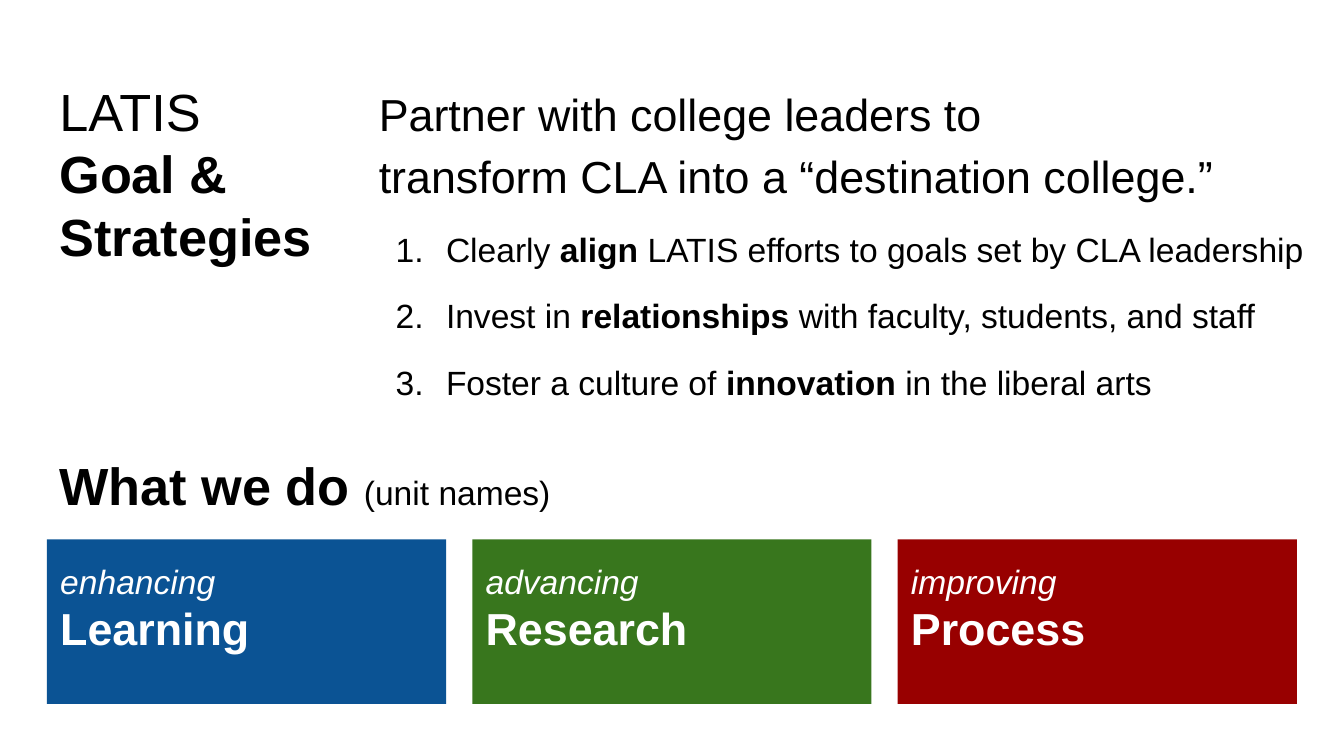
from lxml.etree import SubElement
from pptx import Presentation
from pptx.dml.color import RGBColor
from pptx.enum.shapes import MSO_SHAPE as Shape
from pptx.enum.text import MSO_ANCHOR as Anchor, PP_ALIGN as Align
from pptx.oxml.ns import qn
from pptx.util import Inches, Pt

BLACK = RGBColor(0x00, 0x00, 0x00)
WHITE = RGBColor(0xFF, 0xFF, 0xFF)
BLUE = RGBColor(0x0B, 0x53, 0x94)
GREEN = RGBColor(0x38, 0x76, 0x1D)
RED = RGBColor(0x98, 0x00, 0x00)

CELL = 0.1
MARGIN = 3.5
CONTENT_WIDTH = 93
CARD_WIDTH = 29.7
CARDS = [
    ("enhancing", "Learning", BLUE),
    ("advancing", "Research", GREEN),
    ("improving", "Process", RED),
]
STRATEGIES = [
    ("Clearly ", "align", " LATIS efforts to goals set by CLA leadership"),
    ("Invest in ", "relationships", " with faculty, students, and staff"),
    ("Foster a culture of ", "innovation", " in the liberal arts"),
]


class SlideBuilder:
    font = "Arial"
    heading_size = 28
    lead_size = 24
    body_size = 18

    def __init__(self, presentation):
        self.slide = presentation.slides.add_slide(presentation.slide_layouts[6])

    def place(self, *cells):
        return [Inches(CELL * cell) for cell in cells]

    def prepare(self, frame, anchor=Anchor.TOP, bottom=1):
        frame.word_wrap = True
        frame.vertical_anchor = anchor
        frame.margin_left = frame.margin_right = frame.margin_top = Inches(CELL)
        frame.margin_bottom = Inches(CELL * bottom)
        return frame

    def paragraph(self, frame, first=False):
        paragraph = frame.paragraphs[0] if first else frame.add_paragraph()
        paragraph.alignment = Align.LEFT
        return paragraph

    def run(self, paragraph, text, size, color=BLACK, bold=False, italic=False):
        run = paragraph.add_run()
        run.text = text
        run.font.name = self.font
        run.font.size = Pt(size)
        run.font.bold = bold
        run.font.italic = italic
        run.font.color.rgb = color

    def text_box(self, left, top, width, height):
        shape = self.slide.shapes.add_textbox(*self.place(left, top, width, height))
        return self.prepare(shape.text_frame)

    def heading(self, top, lines):
        frame = self.text_box(3.44, top, 93.2, 6.3)
        for index, runs in enumerate(lines):
            paragraph = self.paragraph(frame, index == 0)
            for text, size, bold in runs:
                self.run(paragraph, text, size, bold=bold)

    def goal(self, lines, strategies):
        frame = self.text_box(27.2, 4.87, 72.8, 11.7)
        paragraph = self.paragraph(frame, True)
        paragraph.line_spacing = 1.15
        for index, line in enumerate(lines):
            if index:
                paragraph.add_line_break()
            self.run(paragraph, line, self.lead_size)
        for before, keyword, after in strategies:
            paragraph = self.paragraph(frame)
            paragraph.space_before = Pt(14)
            self.number(paragraph)
            self.run(paragraph, before, self.body_size)
            self.run(paragraph, keyword, self.body_size, bold=True)
            self.run(paragraph, after, self.body_size)

    def number(self, paragraph):
        properties = paragraph._p.get_or_add_pPr()
        properties.set("marL", str(Inches(0.5)))
        properties.set("indent", str(Pt(-27)))
        color = SubElement(properties, qn("a:buClr"))
        SubElement(color, qn("a:srgbClr"), val=str(BLACK))
        SubElement(properties, qn("a:buFont"), typeface=self.font)
        SubElement(properties, qn("a:buAutoNum"), type="arabicPeriod")

    def card(self, left, verb, unit, color):
        shape = self.slide.shapes.add_shape(
            Shape.RECTANGLE, *self.place(left, 40.13, CARD_WIDTH, 12.25))
        shape.shadow.inherit = False
        shape.fill.solid()
        shape.fill.fore_color.rgb = color
        shape.line.fill.background()
        frame = self.prepare(shape.text_frame, Anchor.BOTTOM, 3.66)
        self.run(self.paragraph(frame, True), verb, self.body_size, WHITE, italic=True)
        self.run(self.paragraph(frame), unit, self.lead_size, WHITE, bold=True)


def main():
    presentation = Presentation()
    presentation.slide_width = Inches(10)
    presentation.slide_height = presentation.slide_width * 9 // 16
    builder = SlideBuilder(presentation)

    step = (CONTENT_WIDTH - CARD_WIDTH) / (len(CARDS) - 1)
    for index, card in enumerate(CARDS):
        builder.card(MARGIN + index * step, *card)

    size = builder.heading_size
    builder.heading(4.87, [
        [("LATIS", size, False)],
        [("Goal &", size, True)],
        [("Strategies", size, True)],
    ])
    builder.goal(
        ["Partner with college leaders to ", "transform CLA into a “destination college.”"],
        STRATEGIES)
    builder.heading(32.7, [
        [("What we do ", size, True), ("(unit names)", builder.body_size, False)],
    ])
    presentation.save("out.pptx")


if __name__ == "__main__":
    main()
